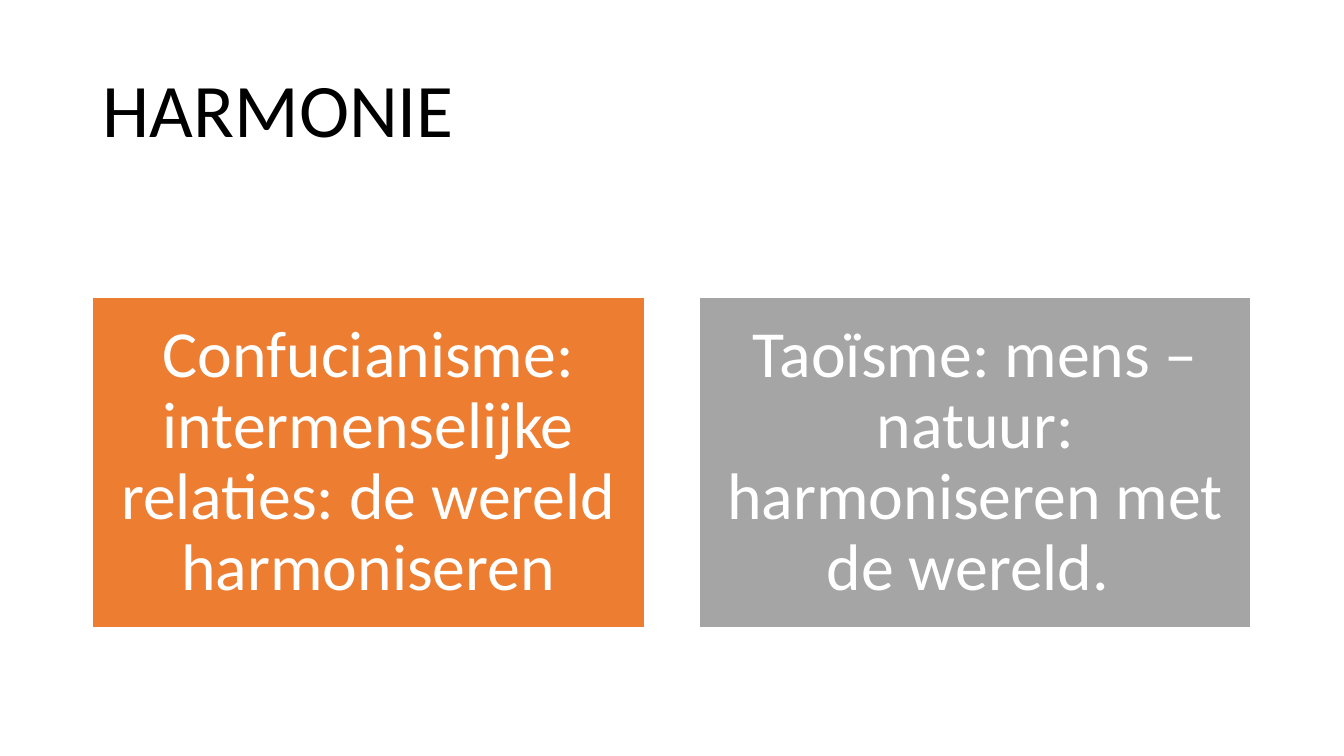
from pptx import Presentation
from pptx.dml.color import RGBColor
from pptx.enum.shapes import MSO_SHAPE
from pptx.enum.text import MSO_ANCHOR, PP_ALIGN
from pptx.util import Inches, Pt

BLACK = RGBColor(0x00, 0x00, 0x00)
WHITE = RGBColor(0xFF, 0xFF, 0xFF)
ORANGE = RGBColor(0xED, 0x7D, 0x31)
GRAY = RGBColor(0xA5, 0xA5, 0xA5)

LEFT = 0.92
CARD_TOP, CARD_WIDTH, CARD_HEIGHT = 2.95, 5.47, 3.28
CARD_PITCH = 6.02
CARD_INSET = Inches(0.2)

TEACHINGS = [
    ("Confucianisme: intermenselijke relaties: de wereld harmoniseren", ORANGE),
    ("Taoïsme: mens – natuur: harmoniseren met de wereld. ", GRAY),
]


def write_text(frame, text, size, color, align):
    """Fill a text frame with one vertically centred paragraph."""
    frame.word_wrap = True
    frame.vertical_anchor = MSO_ANCHOR.MIDDLE
    paragraph = frame.paragraphs[0]
    paragraph.alignment = align
    paragraph.line_spacing = 0.9
    run = paragraph.add_run()
    run.text = text
    run.font.name = "Calibri"
    run.font.size = Pt(size)
    run.font.color.rgb = color


def add_title(slide, text):
    """Add the slide heading."""
    heading = slide.shapes.add_textbox(
        Inches(LEFT), Inches(0.4), Inches(11.5), Inches(1.45))
    write_text(heading.text_frame, text, 54, BLACK, PP_ALIGN.LEFT)


def add_teaching_card(slide, column, text, fill):
    """Add the coloured card of one teaching in its column."""
    card = slide.shapes.add_shape(
        MSO_SHAPE.RECTANGLE, Inches(LEFT + column * CARD_PITCH),
        Inches(CARD_TOP), Inches(CARD_WIDTH), Inches(CARD_HEIGHT))
    card.shadow.inherit = False
    card.fill.solid()
    card.fill.fore_color.rgb = fill
    card.line.color.rgb = WHITE
    card.line.width = Pt(1)
    frame = card.text_frame
    frame.margin_left = frame.margin_right = CARD_INSET
    frame.margin_top = frame.margin_bottom = CARD_INSET
    write_text(frame, text, 47, WHITE, PP_ALIGN.CENTER)


def main():
    """Build and save the slide on harmony."""
    presentation = Presentation()
    presentation.slide_width = Inches(13.33)
    presentation.slide_height = Inches(7.5)
    slide = presentation.slides.add_slide(presentation.slide_layouts[6])
    add_title(slide, "HARMONIE")
    for column, (text, fill) in enumerate(TEACHINGS):
        add_teaching_card(slide, column, text, fill)
    presentation.save("out.pptx")


if __name__ == "__main__":
    main()
